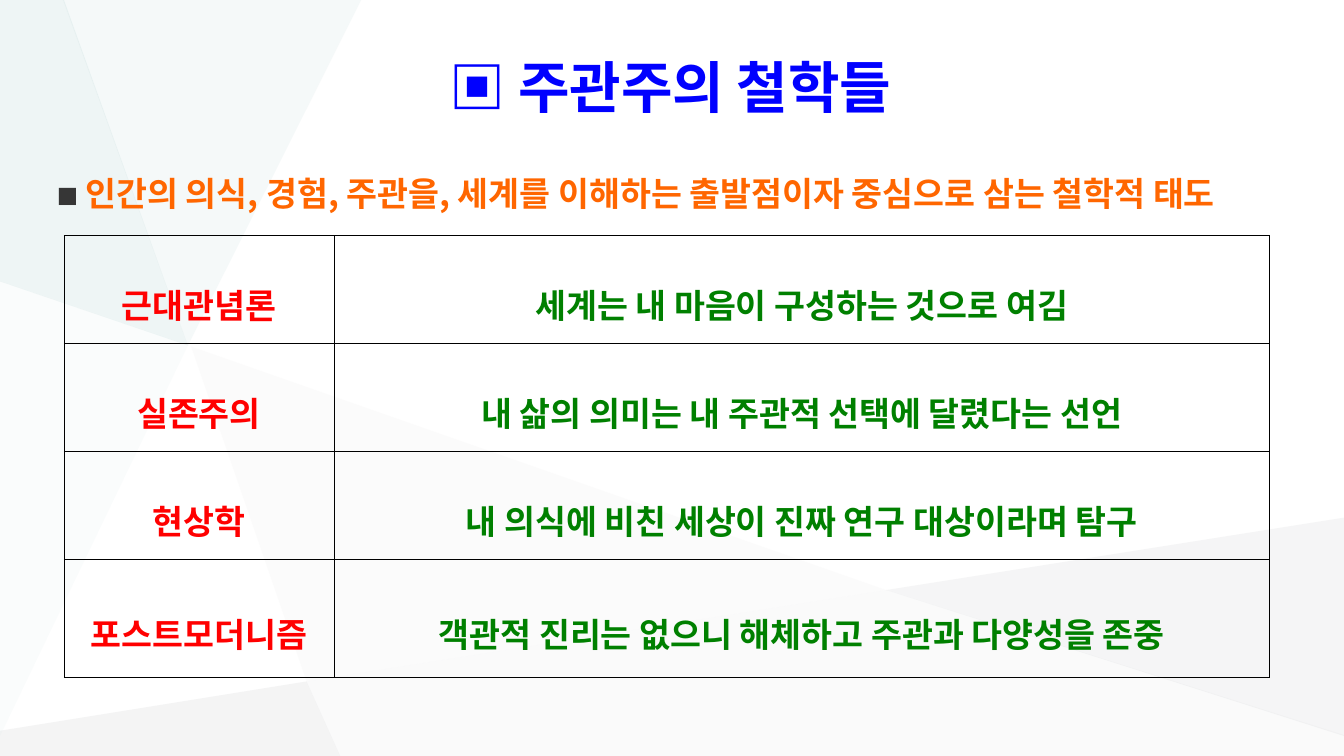
from dataclasses import dataclass

from lxml.etree import SubElement
from pptx import Presentation
from pptx.dml.color import RGBColor
from pptx.enum.text import MSO_ANCHOR as Anchor, PP_ALIGN as Align
from pptx.oxml.ns import qn
from pptx.slide import Slide
from pptx.table import _Cell as Cell
from pptx.text.text import TextFrame, _Paragraph as Paragraph
from pptx.util import Pt

PX = 9525
KOREAN_FONT = "Noto Sans CJK KR"
LINE_SPACING = 1.6
BORDER_WIDTH = Pt(0.33)

BLUE = RGBColor(0x00, 0x00, 0xFF)
ORANGE = RGBColor(0xFF, 0x66, 0x00)
RED = RGBColor(0xFF, 0x00, 0x00)
GREEN = RGBColor(0x00, 0x80, 0x00)
CHARCOAL = RGBColor(0x36, 0x36, 0x36)
MIST = RGBColor(0xF3, 0xF2, 0xF2)
GRAY = RGBColor(0xB6, 0xB8, 0xBA)
SILVER = RGBColor(0xC6, 0xC8, 0xCA)
PALE_TEAL = RGBColor(0xE0, 0xED, 0xED)
TEAL = RGBColor(0xC1, 0xDB, 0xDB)


@dataclass(frozen=True)
class Facet:
    points: list[tuple[int, int]]
    color: RGBColor
    opacity: int


@dataclass(frozen=True)
class Philosophy:
    name: str
    summary: str
    height: int


FACETS = [
    Facet([(182, 330), (292, 649), (844, 562)], MIST, 26),
    Facet([(292, 649), (0, 696), (0, 720), (324, 720)], GRAY, 15),
    Facet([(344, 0), (60, 0), (179, 329)], PALE_TEAL, 31),
    Facet([(1280, 493), (844, 562), (1280, 701)], SILVER, 17),
    Facet([(844, 562), (292, 649), (324, 720), (1280, 720), (1280, 700)], GRAY, 6),
    Facet([(61, 0), (0, 0), (0, 268), (179, 329)], TEAL, 27),
    Facet([(0, 268), (0, 701), (179, 329)], TEAL, 8),
]

PHILOSOPHIES = [
    Philosophy("근대관념론", "세계는 내 마음이 구성하는 것으로 여김", 103),
    Philosophy("실존주의", "내 삶의 의미는 내 주관적 선택에 달렸다는 선언", 103),
    Philosophy("현상학", "내 의식에 비친 세상이 진짜 연구 대상이라며 탐구", 103),
    Philosophy("포스트모더니즘", "객관적 진리는 없으니 해체하고 주관과 다양성을 존중", 112),
]
COLUMN_WIDTHS = [257, 891]


def draw_facet(slide: Slide, facet: Facet) -> None:
    builder = slide.shapes.build_freeform(*facet.points[0], scale=PX)
    builder.add_line_segments(facet.points[1:], close=True)
    shape = builder.convert_to_shape()
    shape.shadow.inherit = False
    shape.line.fill.background()
    shape.fill.solid()
    shape.fill.fore_color.rgb = facet.color
    color = shape._element.spPr.find(qn("a:solidFill"))[0]
    SubElement(color, qn("a:alpha"), val=str(facet.opacity * 1000))


def add_run(paragraph: Paragraph, text: str, size: int, color: RGBColor,
            bold: bool = True, font: str = KOREAN_FONT) -> None:
    run = paragraph.add_run()
    run.text = text
    run.font.size = Pt(size)
    run.font.bold = bold
    run.font.color.rgb = color
    run.font.name = font
    SubElement(run.font._element, qn("a:ea"), typeface=KOREAN_FONT)


def start_paragraph(frame: TextFrame, alignment: Align) -> Paragraph:
    paragraph = frame.paragraphs[0]
    paragraph.alignment = alignment
    paragraph.line_spacing = LINE_SPACING
    return paragraph


def add_text_box(slide: Slide, top: int, height: int, anchor: Anchor) -> TextFrame:
    shape = slide.shapes.add_textbox(45 * PX, top * PX, 1187 * PX, height * PX)
    frame = shape.text_frame
    frame.word_wrap = True
    frame.vertical_anchor = anchor
    return frame


def fill_cell(cell: Cell, text: str, color: RGBColor) -> None:
    properties = cell._tc.get_or_add_tcPr()
    for side in ("lnL", "lnR", "lnT", "lnB"):
        border = SubElement(properties, qn(f"a:{side}"), w=str(BORDER_WIDTH))
        fill = SubElement(border, qn("a:solidFill"))
        SubElement(fill, qn("a:srgbClr"), val="000000")
    cell.fill.background()
    cell.vertical_anchor = Anchor.MIDDLE
    add_run(start_paragraph(cell.text_frame, Align.CENTER), text, 24, color)


def draw_table(slide: Slide) -> None:
    height = sum(philosophy.height for philosophy in PHILOSOPHIES)
    table = slide.shapes.add_table(
        len(PHILOSOPHIES), len(COLUMN_WIDTHS),
        61 * PX, 224 * PX, sum(COLUMN_WIDTHS) * PX, height * PX).table
    table.first_row = False
    table.horz_banding = False
    for column, width in zip(table.columns, COLUMN_WIDTHS):
        column.width = width * PX
    for index, philosophy in enumerate(PHILOSOPHIES):
        table.rows[index].height = philosophy.height * PX
        fill_cell(table.cell(index, 0), philosophy.name, RED)
        fill_cell(table.cell(index, 1), philosophy.summary, GREEN)


def main() -> None:
    presentation = Presentation()
    presentation.slide_width = 1280 * PX
    presentation.slide_height = 720 * PX
    slide = presentation.slides.add_slide(presentation.slide_layouts[6])

    for facet in FACETS:
        draw_facet(slide, facet)

    title = start_paragraph(add_text_box(slide, 13, 99, Anchor.MIDDLE), Align.CENTER)
    add_run(title, "▣ 주관주의 철학들", 40, BLUE, font="Arial")

    thesis = start_paragraph(add_text_box(slide, 137, 521, Anchor.TOP), Align.JUSTIFY)
    add_run(thesis, "◼ ", 24, CHARCOAL, bold=False)
    add_run(thesis, "인간의 의식, 경험, 주관을, 세계를 이해하는 출발점이자 중심으로 삼는 철학적 태도",
            24, ORANGE)

    draw_table(slide)
    presentation.save("out.pptx")


if __name__ == "__main__":
    main()
